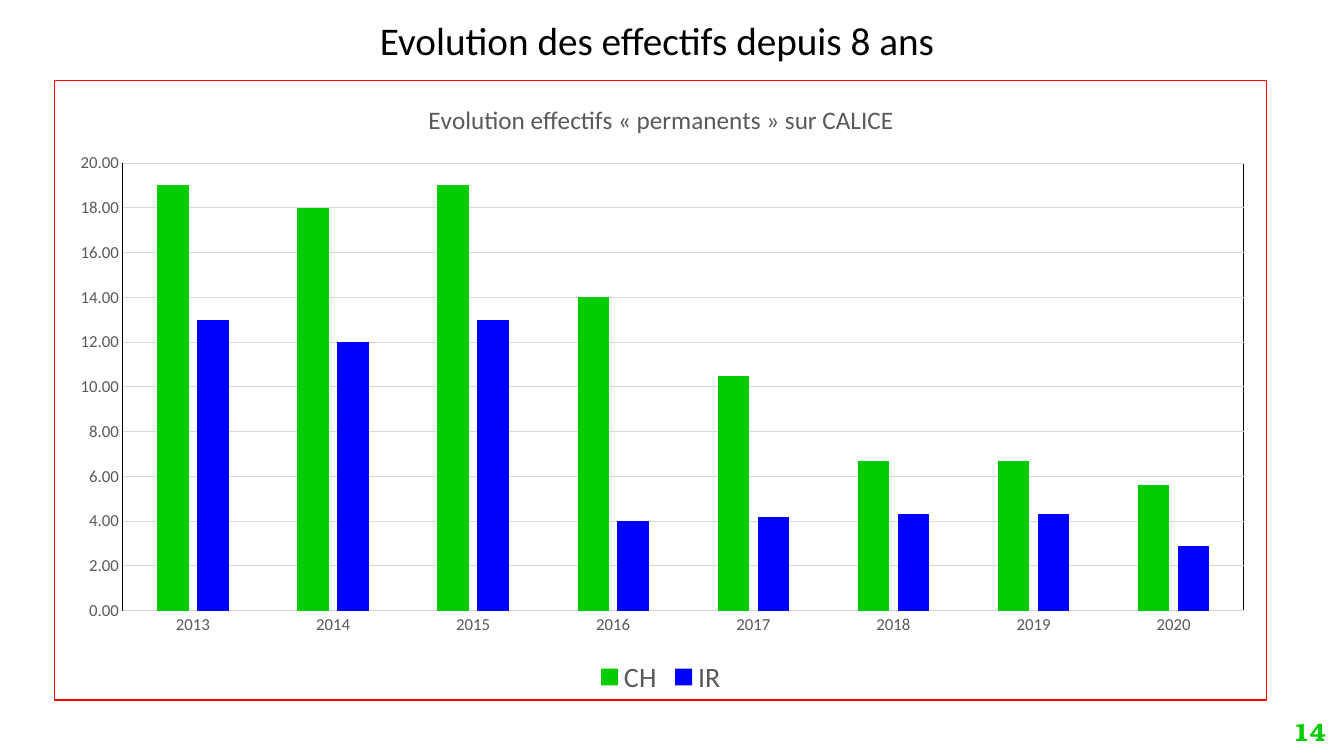
from pptx import Presentation
from pptx.chart.data import CategoryChartData
from pptx.dml.color import RGBColor
from pptx.enum.chart import XL_CHART_TYPE as ChartType
from pptx.enum.chart import XL_LEGEND_POSITION as LegendPosition
from pptx.enum.chart import XL_TICK_MARK as TickMark
from pptx.enum.text import MSO_ANCHOR as Anchor
from pptx.enum.text import MSO_AUTO_SIZE as AutoSize
from pptx.enum.text import PP_ALIGN as Align
from pptx.oxml import parse_xml
from pptx.oxml.ns import nsdecls
from pptx.util import Inches, Pt

COLORS = {
    "black": "000000",
    "gray": "595959",
    "grid": "D9D9D9",
    "red": "FF0000",
    "green": "00CC00",
    "blue": "0000FF",
}
YEARS = [str(year) for year in range(2013, 2021)]
STAFF = {
    "CH": ("green", [19, 18, 19, 14, 10.5, 6.7, 6.7, 5.6]),
    "IR": ("blue", [13, 12, 13, 4, 4.2, 4.3, 4.3, 2.9]),
}
# Inner plot area, as fractions of the chart
PLOT_LAYOUT = {"x": 0.056, "y": 0.134, "w": 0.925, "h": 0.722}


def color(name):
    return RGBColor.from_string(COLORS[name])


def set_format(target, values):
    for name, value in values.items():
        setattr(target, name, value)


def set_font(font, size, color_name, name="Calibri", bold=False):
    set_format(font, {"size": Pt(size), "name": name, "bold": bold})
    font.color.rgb = color(color_name)


def set_line(line, color_name):
    line.width = Pt(0.75)
    line.color.rgb = color(color_name)


def border_xml(color_name):
    return parse_xml(
        f'<c:spPr {nsdecls("c", "a")}><a:noFill/><a:ln w="9525"><a:solidFill>'
        f'<a:srgbClr val="{COLORS[color_name]}"/></a:solidFill></a:ln></c:spPr>'
    )


def add_text(slide, box, text, font, frame_format, alignment):
    shape = slide.shapes.add_textbox(*map(Inches, box))
    set_format(shape.text_frame, frame_format)
    paragraph = shape.text_frame.paragraphs[0]
    paragraph.alignment = alignment
    run = paragraph.add_run()
    run.text = text
    set_font(run.font, **font)


def add_frames(chart):
    """Outline the chart and its plot, and fix the plot's place."""
    chart_space = chart.element
    chart_space.chart.addnext(border_xml("red"))
    plot_area = chart_space.chart.plotArea
    plot_area.append(border_xml("black"))
    for layout in plot_area.findall("c:layout", plot_area.nsmap):
        plot_area.remove(layout)
    places = "".join(f'<c:{key} val="{value}"/>' for key, value in PLOT_LAYOUT.items())
    plot_area.insert(0, parse_xml(
        f'<c:layout {nsdecls("c")}><c:manualLayout><c:layoutTarget val="inner"/>'
        f'<c:xMode val="edge"/><c:yMode val="edge"/>{places}</c:manualLayout></c:layout>'
    ))


def add_staff_chart(slide, box):
    data = CategoryChartData(number_format="0.00")
    data.categories = YEARS
    for name, (_, values) in STAFF.items():
        data.add_series(name, values)
    chart = slide.shapes.add_chart(
        ChartType.COLUMN_CLUSTERED, *map(Inches, box), data).chart
    set_font(chart.font, 10, "black")

    # Title and legend
    chart.has_title = True
    paragraph = chart.chart_title.text_frame.paragraphs[0]
    run = paragraph.add_run()
    run.text = "Evolution effectifs «\u00a0permanents\u00a0» sur CALICE"
    set_font(run.font, 18, "gray")
    chart.chart_title.include_in_layout = False
    chart.has_legend = True
    set_format(chart.legend, {"position": LegendPosition.BOTTOM, "include_in_layout": False})
    set_font(chart.legend.font, 20, "gray")

    # Columns
    plot = chart.plots[0]
    set_format(plot, {"gap_width": 219, "overlap": -27, "vary_by_categories": False})
    for series, (color_name, _) in zip(plot.series, STAFF.values()):
        series.format.fill.solid()
        series.format.fill.fore_color.rgb = color(color_name)

    # Axes
    for axis in (chart.category_axis, chart.value_axis):
        set_format(axis, {"major_tick_mark": TickMark.NONE, "minor_tick_mark": TickMark.NONE})
        set_font(axis.tick_labels.font, 12, "gray")
    set_line(chart.category_axis.format.line, "grid")
    value_axis = chart.value_axis
    set_format(value_axis, {"minimum_scale": 0, "maximum_scale": 20, "major_unit": 2})
    set_format(value_axis.tick_labels,
               {"number_format": "0.00", "number_format_is_linked": False})
    value_axis.format.line.fill.background()
    set_line(value_axis.major_gridlines.format.line, "grid")
    add_frames(chart)


def add_heading(slide, box):
    add_text(slide, box, "Evolution des effectifs depuis 8 ans",
             {"size": 28, "color_name": "black"},
             {"word_wrap": False, "auto_size": AutoSize.SHAPE_TO_FIT_TEXT}, Align.LEFT)


def add_page_number(slide, box):
    add_text(slide, box, "14",
             {"size": 18, "color_name": "green", "name": "TeX Gyre Bonum", "bold": True},
             {"word_wrap": True, "vertical_anchor": Anchor.MIDDLE}, Align.RIGHT)


def main():
    presentation = Presentation()
    set_format(presentation, {"slide_width": Inches(13.33), "slide_height": Inches(7.5)})
    slide = presentation.slides.add_slide(presentation.slide_layouts[6])
    add_staff_chart(slide, (0.54, 0.79, 12.03, 6.16))
    add_heading(slide, (3.67, 0.11, 5.77, 0.57))
    add_page_number(slide, (12.61, 7.06, 0.64, 0.4))
    presentation.save("out.pptx")


if __name__ == "__main__":
    main()
